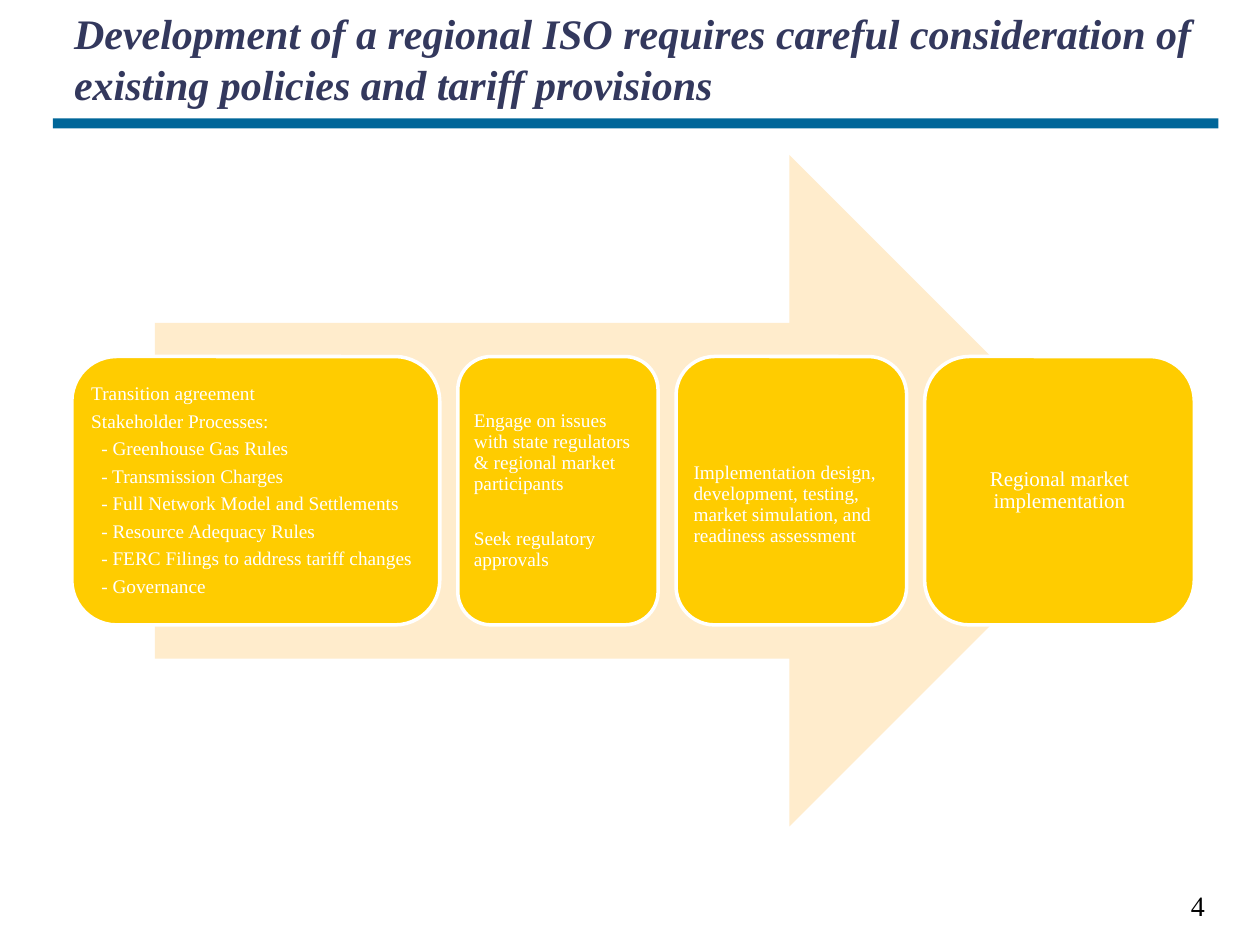
"""Build the slide on the steps towards a regional ISO."""
from pptx import Presentation, util as u
from pptx.dml.color import RGBColor
from pptx.enum import shapes, text

COLORS = {"bar": "006699", "arrow": "FFECCC", "step": "FFCC00",
          "white": "FFFFFF", "title": "33385D", "number": "000000"}
COLUMNS, ROWS = 100, 75
LEFT, CENTER, RIGHT = text.PP_ALIGN.LEFT, text.PP_ALIGN.CENTER, text.PP_ALIGN.RIGHT


class Deck:
    """Hold the style and the current slide; lengths are grid columns and rows."""

    font = "Times New Roman"

    def __init__(self):
        self.deck = Presentation()
        self.deck.slide_width, self.deck.slide_height = u.Inches(10), u.Inches(7.5)
        self.slide = self.deck.slides.add_slide(self.deck.slide_layouts[6])

    def place(self, column, row, columns, rows):
        """Turn a grid area into slide lengths."""
        cell_width = self.deck.slide_width / COLUMNS
        cell_height = self.deck.slide_height / ROWS
        return [round(n) for n in (column * cell_width, row * cell_height,
                                   columns * cell_width, rows * cell_height)]

    def shape(self, kind, area, fill, line=None):
        """Add a flat preset shape."""
        shape = self.slide.shapes.add_shape(kind, *self.place(*area))
        shape.shadow.inherit = False
        shape.fill.solid()
        shape.fill.fore_color.rgb = RGBColor.from_string(COLORS[fill])
        if line:
            shape.line.color.rgb = RGBColor.from_string(COLORS[line])
            shape.line.width = u.Pt(2)
        else:
            shape.line.fill.background()
        return shape

    def style(self, paragraph, size, color, align=LEFT, bold=False, indent=0):
        """Set the font, alignment and left indent of a paragraph."""
        paragraph.alignment = align
        if indent:
            properties = paragraph._p.get_or_add_pPr()
            properties.set("marL", str(u.Inches(indent)))
            properties.set("indent", "0")
        font = paragraph.font
        font.name, font.size = self.font, u.Pt(size)
        font.bold = font.italic = bold
        font.color.rgb = RGBColor.from_string(COLORS[color])

    def label(self, area, words, anchor, **style):
        """Add a text box with one paragraph."""
        frame = self.slide.shapes.add_textbox(*self.place(*area)).text_frame
        frame.word_wrap = True
        frame.vertical_anchor = anchor
        frame.text = words
        self.style(frame.paragraphs[0], **style)

    def step(self, area, lines, size=11, align=LEFT, drop=0, gap=0):
        """Add a rounded step; drop lowers its text and gap parts its paragraphs."""
        rounded = shapes.MSO_SHAPE.ROUNDED_RECTANGLE
        frame = self.shape(rounded, area, "step", "white").text_frame
        frame.word_wrap = True
        frame.vertical_anchor = text.MSO_ANCHOR.MIDDLE
        frame.margin_left = frame.margin_right = frame.margin_bottom = u.Inches(0.05)
        frame.margin_top = u.Inches(0.05 + drop)
        for index, line in enumerate(lines):
            paragraph = frame.add_paragraph() if index else frame.paragraphs[0]
            paragraph.text = line
            paragraph.line_spacing = 0.9
            paragraph.space_after = u.Pt(round(0.35 * size, 2))
            if index and gap:
                paragraph.space_before = u.Pt(gap)
            self.style(paragraph, size, "white", align,
                       indent=0.08 if line.startswith("-") else 0)


STEPS = [
    (29.2, ["Transition agreement", "Stakeholder Processes:",
            "- Greenhouse Gas Rules", "- Transmission Charges",
            "- Full Network Model and Settlements", "- Resource Adequacy Rules",
            "- FERC Filings to address tariff changes", "- Governance"], {}),
    (15.9, ["Engage on issues with state regulators & regional market participants",
            "Seek regulatory approvals"], {"gap": 15.7}),
    (18.3, ["Implementation design, development, testing, market simulation, "
            "and readiness assessment"], {"drop": 0.22}),
    (21.4, ["Regional market implementation"], {"size": 12, "align": CENTER}),
]
STEP_GAP = 1.43


def main():
    """Draw the slide and save it."""
    deck = Deck()
    deck.shape(shapes.MSO_SHAPE.RECTANGLE, (4.2, 9.4, 92.5, 0.8), "bar")
    deck.label((85.8, 70, 10.8, 3.7), "4", text.MSO_ANCHOR.TOP,
               size=16, color="number", align=RIGHT)
    deck.shape(shapes.MSO_SHAPE.RIGHT_ARROW, (12.3, 12.3, 77, 53.3), "arrow")
    column = 5.7
    for width, lines, options in STEPS:
        deck.step((column, 28.3, width, 21.3), lines, **options)
        column += width + STEP_GAP
    deck.label((-0.1, 0, 96.7, 9.2),
               "Development of a regional ISO requires careful consideration of "
               "existing policies and tariff provisions", text.MSO_ANCHOR.MIDDLE,
               size=24, color="title", bold=True, indent=0.5)
    deck.deck.save("out.pptx")


if __name__ == "__main__":
    main()
